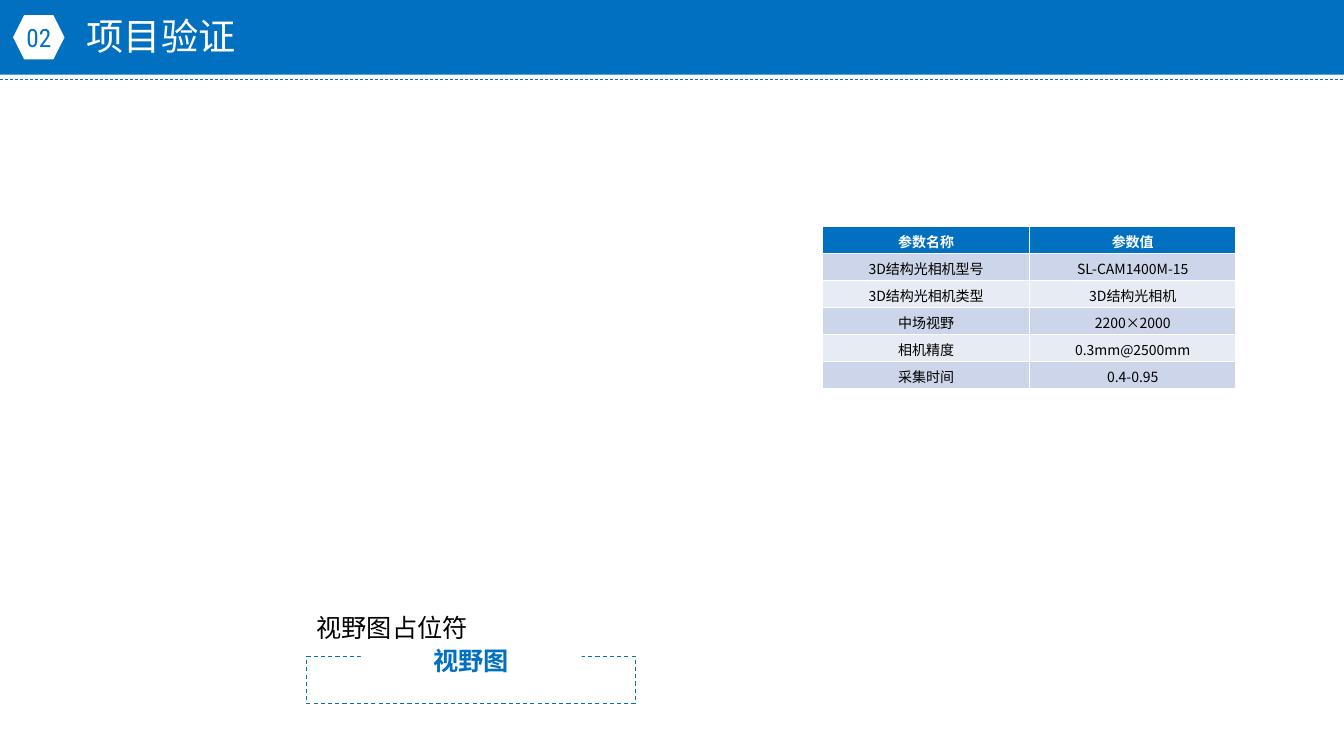
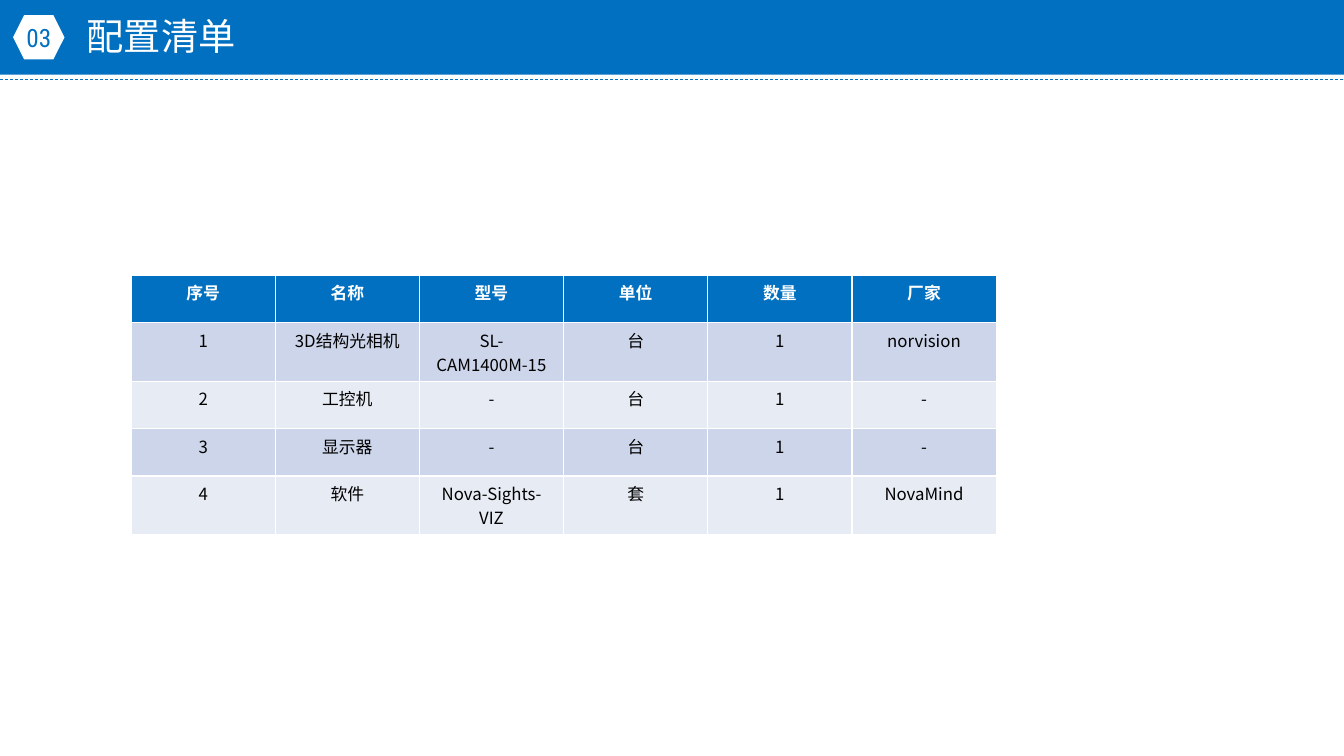
from lxml import etree
from pptx import Presentation
from pptx.dml.color import RGBColor
from pptx.enum.dml import MSO_LINE
from pptx.enum.shapes import MSO_CONNECTOR, MSO_SHAPE
from pptx.enum.text import MSO_ANCHOR, MSO_AUTO_SIZE, PP_ALIGN
from pptx.oxml.ns import qn
from pptx.util import Inches, Pt

RECTANGLE, ROUNDED, HEXAGON = MSO_SHAPE.RECTANGLE, MSO_SHAPE.ROUNDED_RECTANGLE, MSO_SHAPE.HEXAGON
STRAIGHT, DASH = MSO_CONNECTOR.STRAIGHT, MSO_LINE.DASH
LEFT, CENTER = PP_ALIGN.LEFT, PP_ALIGN.CENTER
TOP, MIDDLE = MSO_ANCHOR.TOP, MSO_ANCHOR.MIDDLE
GROW, FIXED = MSO_AUTO_SIZE.SHAPE_TO_FIT_TEXT, MSO_AUTO_SIZE.NONE

COLORS = {"blue": "0170C1", "white": "FFFFFF", "black": "000000",
          "band_dark": "CCD5E9", "band_light": "E7EBF4"}
TEXT_FONT, NUMBER_FONT = "Noto Sans CJK SC", "Roboto Condensed"
PAGE_WIDTH, PAGE_HEIGHT = 13.33, 7.5
TITLE_ONLY = 5

CAMERA_MODEL = "SL-CAM1400M-15"
PARAMETERS = [
    ("参数名称", "参数值"),
    ("3D结构光相机型号", CAMERA_MODEL),
    ("3D结构光相机类型", "3D结构光相机"),
    ("中场视野", "2200×2000"),
    ("相机精度", "0.3mm@2500mm"),
    ("采集时间", "0.4-0.95"),
]
EQUIPMENT = [
    ("序号", "名称", "型号", "单位", "数量", "厂家"),
    ("1", "3D结构光相机", CAMERA_MODEL, "台", "1", "norvision"),
    ("2", "工控机", "-", "台", "1", "-"),
    ("3", "显示器", "-", "台", "1", "-"),
    ("4", "软件", "Nova-Sights-VIZ", "套", "1", "NovaMind"),
]


def color(name):
    return RGBColor.from_string(COLORS[name])


def write(frame, text, size, ink, align=LEFT, font=TEXT_FONT, bold=False):
    para = frame.paragraphs[0]
    para.alignment = align
    span = para.add_run()
    span.text = text
    style = {"size": Pt(size), "name": font, "bold": bold}
    for name, value in style.items():
        setattr(span.font, name, value)
    span.font.color.rgb = color(ink)
    east_asian = etree.SubElement(span._r.get_or_add_rPr(), qn("a:ea"))
    east_asian.set("typeface", font)


def set_frame(frame, **settings):
    for name, value in settings.items():
        setattr(frame, name, value)


def dash_line(line, width):
    line.color.rgb = color("blue")
    line.width = Pt(width)
    line.dash_style = DASH


def add_box(page, kind, box, fill=None):
    shape = page.shapes.add_shape(kind, *map(Inches, box))
    shape.shadow.inherit = False
    shape.line.fill.background()
    if fill:
        shape.fill.solid()
        shape.fill.fore_color.rgb = color(fill)
    else:
        shape.fill.background()
    return shape


def add_layout_band(page, layout):
    """Draw the top band and its dashed rule, then hand them to the layout."""
    band = add_box(page, RECTANGLE, (0, 0, PAGE_WIDTH, 0.74), "blue")
    rule = page.shapes.add_connector(STRAIGHT, 0, Inches(0.79), Inches(PAGE_WIDTH), Inches(0.79))
    dash_line(rule.line, 0.5)
    etree.SubElement(rule.element.spPr, qn("a:effectLst"))
    for part in (band, rule):
        layout.shapes.element.append(part.element)


def add_heading(page, number, title):
    # Section number
    badge = add_box(page, HEXAGON, (0.13, 0.15, 0.51, 0.44), "white")
    set_frame(badge.text_frame, margin_left=0, margin_top=0, margin_right=0,
              margin_bottom=0, vertical_anchor=MIDDLE)
    write(badge.text_frame, number, 18, "blue", CENTER, NUMBER_FONT)

    # Title, wide enough to stay on one line
    holder = page.shapes.title
    place = dict(zip(("left", "top", "width", "height"), map(Inches, (0.76, 0.08, 6, 0.55))))
    for name, value in place.items():
        setattr(holder, name, value)
    set_frame(holder.text_frame, word_wrap=True, auto_size=FIXED, vertical_anchor=TOP)
    write(holder.text_frame, title, 26.6, "white")


def set_borders(cell):
    properties = cell._tc.get_or_add_tcPr()
    for index, tag in enumerate(("a:lnL", "a:lnR", "a:lnT", "a:lnB")):
        border = etree.Element(qn(tag), w=str(Pt(1)))
        fill = etree.SubElement(border, qn("a:solidFill"))
        etree.SubElement(fill, qn("a:srgbClr"), val=COLORS["white"])
        properties.insert(index, border)


def add_grid(page, rows, left, top, column_width, row_height, size):
    """Table with a blue header and alternating body rows."""
    columns = len(rows[0])
    box = (left, top, column_width * columns, row_height * len(rows))
    table = page.shapes.add_table(len(rows), columns, *map(Inches, box)).table
    table.horz_banding = False
    for column in table.columns:
        column.width = Inches(column_width)
    for row_index, texts in enumerate(rows):
        table.rows[row_index].height = Inches(row_height)
        header = row_index == 0
        fill = "blue" if header else ("band_light", "band_dark")[row_index % 2]
        for column_index, text in enumerate(texts):
            cell = table.cell(row_index, column_index)
            cell.fill.solid()
            cell.fill.fore_color.rgb = color(fill)
            set_borders(cell)
            write(cell.text_frame, text, size, "white" if header else "black", CENTER, bold=header)


def add_view_panel(page, left, top):
    """Dashed frame with its label set into the upper edge and a caption above."""
    frame = add_box(page, ROUNDED, (left, top + 0.48, 3.26, 0.47))
    frame.adjustments[0] = 0
    dash_line(frame.line, 0.75)

    label = add_box(page, RECTANGLE, (left + 0.54, top + 0.32, 2.19, 0.4), "white")
    set_frame(label.text_frame, word_wrap=True, auto_size=GROW, vertical_anchor=TOP)
    write(label.text_frame, "视野图", 18, "blue", CENTER, bold=True)

    caption = page.shapes.add_textbox(*map(Inches, (left, top, 3.09, 0.4)))
    set_frame(caption.text_frame, word_wrap=True, auto_size=GROW)
    write(caption.text_frame, "视野图占位符", 18, "black")


def build_verification(page):
    add_heading(page, "02", "项目验证")
    add_view_panel(page, 3.04, 6.03)
    add_grid(page, PARAMETERS, 8.16, 2.25, 2.05, 0.12, 10)


def build_equipment(page):
    add_heading(page, "03", "配置清单")
    add_grid(page, EQUIPMENT, 1.3, 2.73, 1.43, 0.47, 12)


def main():
    deck = Presentation()
    deck.slide_width, deck.slide_height = Inches(PAGE_WIDTH), Inches(PAGE_HEIGHT)
    layout = deck.slide_layouts[TITLE_ONLY]
    builders = (build_verification, build_equipment)
    pages = [deck.slides.add_slide(layout) for _ in builders]
    add_layout_band(pages[0], layout)
    for build, page in zip(builders, pages):
        build(page)
    deck.save("out.pptx")


if __name__ == "__main__":
    main()
